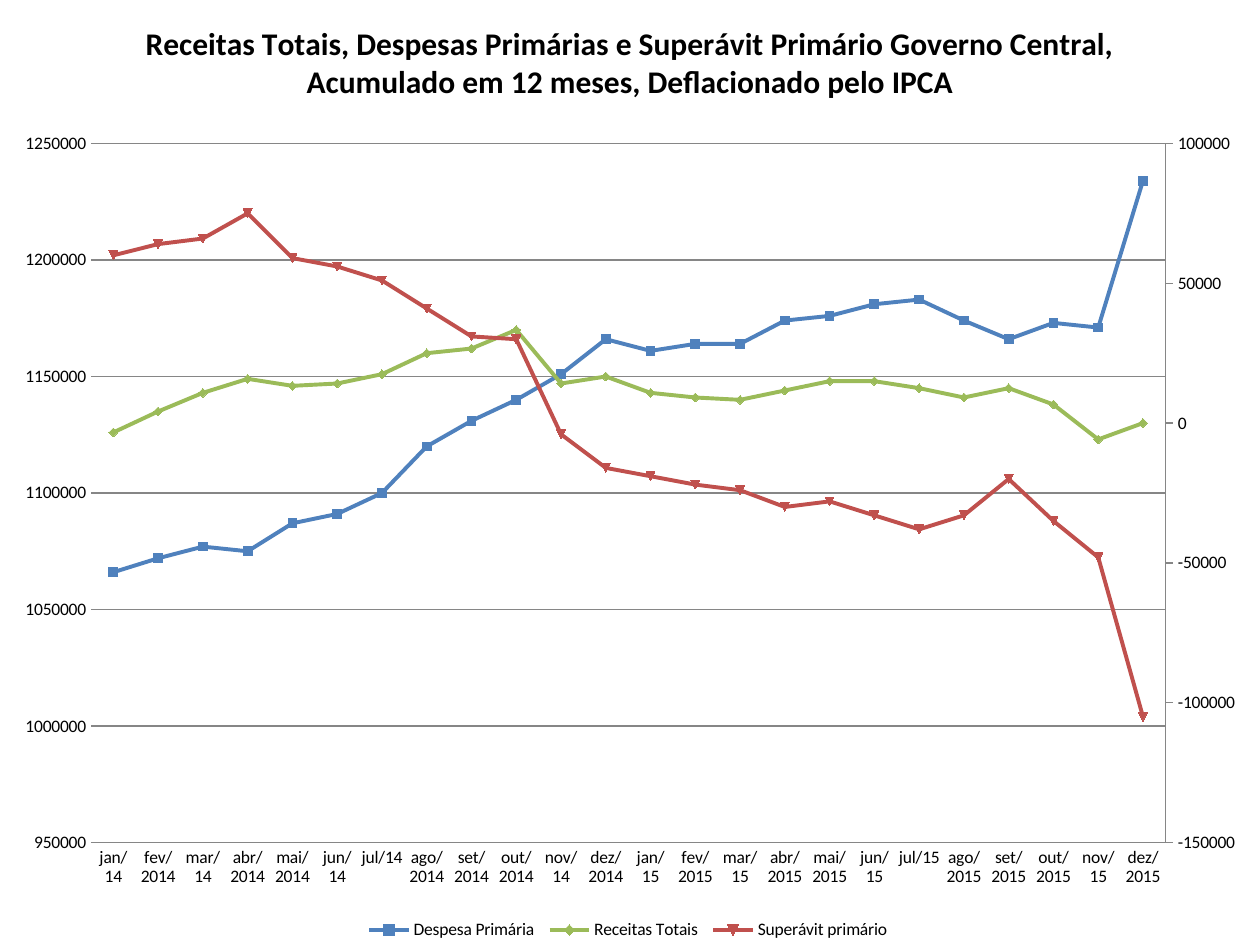
"""Build a slide with a two-axis line chart of the central government accounts."""
from copy import deepcopy

from lxml.etree import SubElement
from pptx import Presentation
from pptx.chart.data import CategoryChartData
from pptx.dml.color import RGBColor
from pptx.enum.chart import XL_CHART_TYPE, XL_LEGEND_POSITION, XL_TICK_LABEL_POSITION, XL_TICK_MARK
from pptx.oxml import parse_xml
from pptx.oxml.ns import qn
from pptx.util import Pt

WIDTH, HEIGHT = 720, 540
FONT = "Calibri"
BLACK, GREY = "000000", "868686"
TITLE = ("Receitas Totais, Despesas Primárias e Superávit Primário Governo Central, "
         "Acumulado em 12 meses, Deflacionado pelo IPCA")
TITLE_PLACE = {"x": 80, "y": 9}
PLOT_PLACE = {"x": 52, "y": 82, "w": 614, "h": 399.6}
MONTHS = [
    "jan/14", "fev/2014", "mar/14", "abr/2014", "mai/2014", "jun/14",
    "jul/14", "ago/2014", "set/2014", "out/2014", "nov/14", "dez/2014",
    "jan/15", "fev/2015", "mar/15", "abr/2015", "mai/2015", "jun/15",
    "jul/15", "ago/2015", "set/2015", "out/2015", "nov/15", "dez/2015",
]
SERIES = [
    ("Despesa Primária ", "4F81BD", [
        1066000, 1072000, 1077000, 1075000, 1087000, 1091000, 1100000, 1120000,
        1131000, 1140000, 1151000, 1166000, 1161000, 1164000, 1164000, 1174000,
        1176000, 1181000, 1183000, 1174000, 1166000, 1173000, 1171000, 1234000]),
    ("Receitas Totais ", "9BBB59", [
        1126000, 1135000, 1143000, 1149000, 1146000, 1147000, 1151000, 1160000,
        1162000, 1170000, 1147000, 1150000, 1143000, 1141000, 1140000, 1144000,
        1148000, 1148000, 1145000, 1141000, 1145000, 1138000, 1123000, 1130000]),
    ("Superávit primário ", "C0504D", [
        60000, 64000, 66000, 75000, 59000, 56000, 51000, 41000,
        31000, 30000, -4000, -16000, -19000, -22000, -24000, -30000,
        -28000, -33000, -38000, -33000, -20000, -35000, -48000, -105000]),
]
LEFT_SCALE = (950000, 1250000)
RIGHT_SCALE = (-150000, 100000)
RIGHT_CATEGORY_ID, RIGHT_VALUE_ID = "5001", "5002"


def color(value):
    return RGBColor.from_string(value)


def style_line(line, value, width):
    line.color.rgb = color(value)
    line.width = Pt(width)


def style_font(font, size, bold=False):
    font.name, font.size, font.bold = FONT, Pt(size), bold
    font.color.rgb = color(BLACK)


def style_axes(chart):
    category_axis, value_axis = chart.category_axis, chart.value_axis
    for axis in (category_axis, value_axis):
        axis.major_tick_mark = axis.minor_tick_mark = XL_TICK_MARK.NONE
        style_font(axis.tick_labels.font, 10)
    category_axis.tick_label_position = XL_TICK_LABEL_POSITION.NEXT_TO_AXIS
    style_line(category_axis.format.line, GREY, 0.75)
    value_axis.minimum_scale, value_axis.maximum_scale = LEFT_SCALE
    value_axis.major_unit = 50000
    value_axis.tick_labels.number_format = "General"
    value_axis.tick_labels.number_format_is_linked = False
    value_axis.format.line.fill.background()
    style_line(value_axis.major_gridlines.format.line, GREY, 0.75)


def set_value(element, tag, value):
    element.find(qn(tag)).set("val", str(value))


def move_last_series_to_right_axis(chart):
    plot_area = chart.plots[0]._element.getparent()
    left_plot = plot_area.find(qn("c:lineChart"))
    right_plot = deepcopy(left_plot)
    left_plot.addnext(right_plot)
    left_plot.remove(left_plot.findall(qn("c:ser"))[-1])
    for series in right_plot.findall(qn("c:ser"))[:-1]:
        right_plot.remove(series)
    axis_ids = (RIGHT_CATEGORY_ID, RIGHT_VALUE_ID)
    for element, axis_id in zip(right_plot.findall(qn("c:axId")), axis_ids):
        element.set("val", axis_id)

    left_value = plot_area.find(qn("c:valAx"))
    right_value = deepcopy(left_value)
    right_category = deepcopy(plot_area.find(qn("c:catAx")))
    left_value.addnext(right_value)
    right_value.addnext(right_category)
    for axis, own, other in ((right_category, *axis_ids), (right_value, *reversed(axis_ids))):
        set_value(axis, "c:axId", own)
        set_value(axis, "c:crossAx", other)
    set_value(right_category, "c:delete", 1)
    right_value.remove(right_value.find(qn("c:majorGridlines")))
    set_value(right_value, "c:axPos", "r")
    set_value(right_value, "c:crosses", "max")
    scaling = right_value.find(qn("c:scaling"))
    for tag, limit in zip(("c:min", "c:max"), RIGHT_SCALE):
        set_value(scaling, tag, limit)
    right_value.get_or_add_majorTickMark().val = XL_TICK_MARK.OUTSIDE
    outline = right_value.find(qn("c:spPr")).find(qn("a:ln"))
    outline.getparent().replace(outline, parse_xml(
        '<a:ln xmlns:a="http://schemas.openxmlformats.org/drawingml/2006/main" w="9525">'
        f'<a:solidFill><a:srgbClr val="{GREY}"/></a:solidFill></a:ln>'))


def place(element, position, settings, index):
    layout = element.find(qn("c:layout"))
    if layout is None:
        layout = SubElement(element, qn("c:layout"))
        element.insert(index, layout)
    manual = SubElement(layout, qn("c:manualLayout"))
    sides = {"x": WIDTH, "y": HEIGHT, "w": WIDTH, "h": HEIGHT}
    shares = {name: length / sides[name] for name, length in position.items()}
    for name, value in {**settings, "xMode": "edge", "yMode": "edge", **shares}.items():
        SubElement(manual, qn(f"c:{name}")).set("val", str(value))


def add_accounts_chart(slide):
    data = CategoryChartData(number_format="General")
    data.categories = MONTHS
    for name, _, values in SERIES:
        data.add_series(name, values)
    chart = slide.shapes.add_chart(
        XL_CHART_TYPE.LINE_MARKERS, 0, 0, Pt(WIDTH), Pt(HEIGHT), data).chart
    style_font(chart.font, 10)
    chart.has_title = True
    run = chart.chart_title.text_frame.paragraphs[0].add_run()
    run.text = TITLE
    style_font(run.font, 18, bold=True)
    chart.chart_title.include_in_layout = False
    chart.has_legend = True
    chart.legend.position = XL_LEGEND_POSITION.BOTTOM
    chart.legend.include_in_layout = False
    style_font(chart.legend.font, 10)
    chart.plots[0].vary_by_categories = False
    for series, (_, shade, _) in zip(chart.plots[0].series, SERIES):
        series.smooth = False
        style_line(series.format.line, shade, 2.25)
        series.marker.format.fill.solid()
        series.marker.format.fill.fore_color.rgb = color(shade)
        style_line(series.marker.format.line, shade, 0.75)
    style_axes(chart)
    move_last_series_to_right_axis(chart)
    place(chart.chart_title._element, TITLE_PLACE, {}, 1)
    place(chart.plots[0]._element.getparent(), PLOT_PLACE, {"layoutTarget": "inner"}, 0)


def main():
    presentation = Presentation()
    presentation.slide_width, presentation.slide_height = Pt(WIDTH), Pt(HEIGHT)
    slide = presentation.slides.add_slide(presentation.slide_layouts[6])
    add_accounts_chart(slide)
    presentation.save("out.pptx")


if __name__ == "__main__":
    main()
